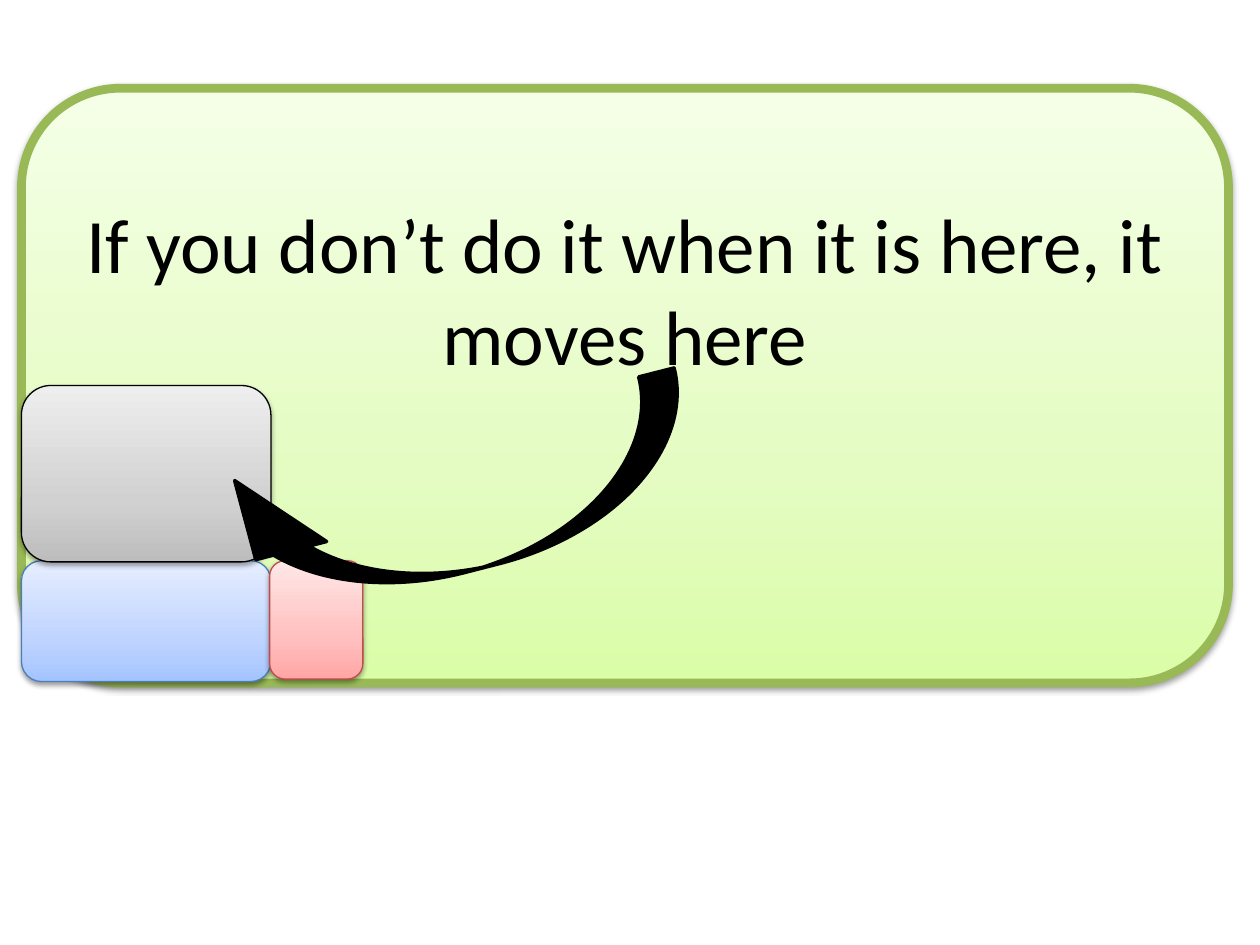
from copy import deepcopy

from lxml import etree
from pptx import Presentation
from pptx.dml.color import RGBColor
from pptx.enum.shapes import MSO_SHAPE
from pptx.enum.text import MSO_ANCHOR, PP_ALIGN
from pptx.oxml.ns import qn
from pptx.util import Inches, Pt

ROUND = MSO_SHAPE.ROUNDED_RECTANGLE
CURVED = MSO_SHAPE.CURVED_LEFT_ARROW
TOP = MSO_ANCHOR.TOP
CENTER = PP_ALIGN.CENTER
STOPS = (0, 0.35, 1)


def color(code):
    return RGBColor.from_string(code)


def add_shape(shapes, kind, spot, line, width):
    shape = shapes.add_shape(kind, *map(Inches, spot))
    shape.line.color.rgb = color(line)
    shape.line.width = Pt(width)
    shape.shadow.inherit = False
    return shape


def add_fade(shape, codes):
    fill = shape.fill
    fill.gradient()
    fill.gradient_angle = 90
    group = shape.element.spPr.find(qn("a:gradFill")).find(qn("a:gsLst"))
    group.insert(1, deepcopy(group[0]))
    for stop, place, code in zip(fill.gradient_stops, STOPS, codes):
        stop.position = place
        stop.color.rgb = color(code)


def add_shadow(shape):
    effects = shape.element.spPr.find(qn("a:effectLst"))
    shadow = etree.SubElement(
        effects, qn("a:outerShdw"), blurRad=str(Pt(3.1)),
        dist=str(Pt(1.6)), dir="5400000", rotWithShape="0")
    black = etree.SubElement(shadow, qn("a:srgbClr"), val="000000")
    etree.SubElement(black, qn("a:alpha"), val="38000")


def add_box(shapes, spot, codes, line, width=0.75):
    box = add_shape(shapes, ROUND, spot, line, width)
    add_fade(box, codes)
    add_shadow(box)
    return box


def add_text(box, words, size, inset):
    frame = box.text_frame
    frame.word_wrap = True
    frame.vertical_anchor = TOP
    frame.margin_top = Inches(inset)
    para = frame.paragraphs[0]
    para.alignment = CENTER
    run = para.add_run()
    run.text = words
    run.font.size = Pt(size)
    run.font.name = "Calibri"
    run.font.color.rgb = color("000000")


def add_arrow(shapes, spot, turn, bends):
    arrow = add_shape(shapes, CURVED, spot, "000000", 2)
    arrow.fill.solid()
    arrow.fill.fore_color.rgb = color("000000")
    arrow.rotation = turn
    for index, bend in enumerate(bends):
        arrow.adjustments[index] = bend


def main():
    deck = Presentation()
    deck.slide_width = Inches(10)
    deck.slide_height = Inches(7.5)
    slide = deck.slides.add_slide(deck.slide_layouts[6])
    shapes = slide.shapes.add_group_shape().shapes

    panel = add_box(shapes, (0.17, 0.7, 9.58, 4.72),
                    ("DAFDA7", "E4FCC2", "F5FFE7"), "98B955", 5)
    add_text(panel, "If you don’t do it when it is here, it moves here",
             44, 0.63)
    add_box(shapes, (0.17, 4.45, 1.98, 0.96),
            ("A4C4FF", "BFD4FF", "E6EEFF"), "4B7EBC")
    add_box(shapes, (2.14, 4.45, 0.74, 0.94),
            ("FFA6A5", "FFC0BF", "FFE7E7"), "BF4C48")
    add_box(shapes, (0.17, 3.06, 1.98, 1.4),
            ("BDBDBD", "D1D1D1", "EEEEEE"), "000000")
    add_arrow(slide.shapes, (3.03, 2.02, 1.16, 3.89), 75.6,
              (0.25, 0.5, 0.56))
    deck.save("out.pptx")


if __name__ == "__main__":
    main()
